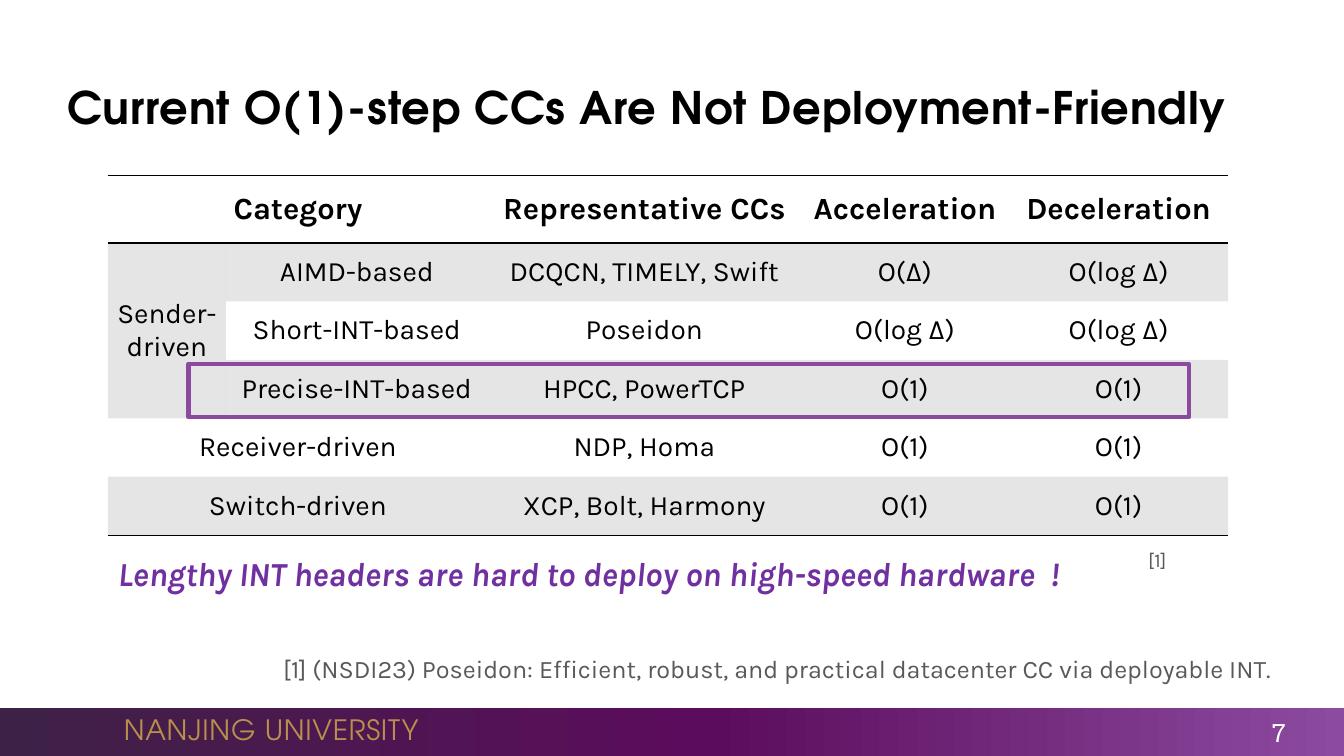
"""Build the slide on O(1)-step congestion control and its deployment limits."""
from copy import deepcopy
from dataclasses import dataclass

from lxml.etree import SubElement as sub
from pptx import Presentation
from pptx.dml.color import RGBColor as Rgb
from pptx.enum.shapes import MSO_SHAPE as Shape
from pptx.enum.text import MSO_ANCHOR as Anchor, PP_ALIGN as Align
from pptx.oxml.ns import qn
from pptx.util import Emu, Pt


@dataclass(frozen=True)
class Theme:
    geo: str = "TeX Gyre Adventor"
    body: str = "Karla"
    slab: str = "Roboto Slab"
    black: str = "000000"
    white: str = "FFFFFF"
    gray: str = "595959"
    shade: str = "808080"
    gold: str = "B88F4C"
    violet: str = "7030A0"
    frame: str = "8B4A9F"
    bar: tuple = ((0, "3E2146"), (0.53, "5C0C5C"), (1, "8C4BA0"))
    title: int = 32
    claim: int = 24
    head: int = 22
    cell: int = 20
    note: int = 18
    mark: int = 14
    plain: str = "{2D5ABB26-0587-4C30-8999-92F81FD0307C}"


@dataclass(frozen=True)
class Label:
    text: str
    box: tuple
    size: int
    color: str
    font: str = Theme.body
    bold: bool = False
    italic: bool = False
    align: Align = Align.LEFT
    anchor: Anchor = Anchor.TOP
    wrap: bool = True
    track: int = 0


@dataclass(frozen=True)
class Grid:
    left: int
    cols: tuple
    rows: tuple
    spans: tuple = ()


T = Theme()
TOP, HEAD, ROW, PAD = 174, 67, 58, 3

LABELS = (
    Label("NANJING UNIVERSITY", (113, 702, 317, 44), T.cell, T.gold, T.geo,
          anchor=Anchor.MIDDLE, wrap=False, track=50),
    Label("7", (1179, 709, 106, 35), T.note, T.white, T.slab,
          align=Align.RIGHT, anchor=Anchor.MIDDLE),
    Label("Current O(1)-step CCs Are Not Deployment-Friendly", (57, 67, 1200, 77),
          T.title, T.black, T.geo, bold=True, anchor=Anchor.MIDDLE, track=50),
    Label("[1] (NSDI23) Poseidon: Efficient, robust, and practical datacenter CC "
          "via deployable INT.", (271, 643, 1014, 40), T.note, T.gray),
    Label("[1]", (1129, 539, 50, 34), T.mark, T.gray),
    Label("Lengthy INT headers are hard to deploy on high-speed hardware  !",
          (107, 544, 1109, 50), T.claim, T.violet, bold=True, italic=True),
)

GRIDS = (
    Grid(107, (117, 260), (
        ("Category", ""),
        ("Sender-driven", "AIMD-based"),
        ("", "Short-INT-based"),
        ("", "Precise-INT-based"),
        ("Receiver-driven", ""),
        ("Switch-driven", ""),
    ), ((0, 0, 0, 1), (1, 0, 3, 0), (4, 0, 4, 1), (5, 0, 5, 1))),
    Grid(484, (310,), (
        ("Representative CCs",),
        ("DCQCN, TIMELY, Swift",),
        ("Poseidon",),
        ("HPCC, PowerTCP",),
        ("NDP, Homa",),
        ("XCP, Bolt, Harmony",),
    )),
    Grid(794, (207, 217), (
        ("Acceleration", "Deceleration"),
        ("O(Δ)", "O(log Δ)"),
        ("O(log Δ)", "O(log Δ)"),
        ("O(1)", "O(1)"),
        ("O(1)", "O(1)"),
        ("O(1)", "O(1)"),
    )),
)


def px(n: int) -> Emu:
    """Turn px, 100 to the inch, into EMU."""
    return Emu(n * 9144)


def style(para, size: int, color: str, font: str, bold: bool, italic: bool = False) -> None:
    """Set the font of a whole paragraph."""
    face = para.font
    face.size, face.name, face.bold, face.italic = Pt(size), font, bold, italic
    face.color.rgb = Rgb.from_string(color)


def write(slide, item: Label) -> None:
    """Add one text box."""
    frame = slide.shapes.add_textbox(*map(px, item.box)).text_frame
    frame.word_wrap, frame.vertical_anchor = item.wrap, item.anchor
    para = frame.paragraphs[0]
    para.text, para.alignment = item.text, item.align
    style(para, item.size, item.color, item.font, item.bold, item.italic)
    if item.track:
        para.runs[0].font._element.set("spc", str(item.track))


def rule(cell, side: str) -> None:
    """Draw a one point border on one side of a cell."""
    line = sub(cell._tc.get_or_add_tcPr(), qn(f"a:ln{side}"), w=str(Pt(1)))
    sub(sub(line, qn("a:solidFill")), qn("a:srgbClr"), val=T.black)


def tint(cell) -> None:
    """Fill a cell with see-through gray."""
    cell.fill.solid()
    cell.fill.fore_color.rgb = Rgb.from_string(T.shade)
    tone = cell._tc.tcPr.find(f"{qn('a:solidFill')}/{qn('a:srgbClr')}")
    sub(tone, qn("a:alpha"), val="20000")


def dress(cell, text: str, row: int, last: int) -> None:
    """Give a cell its text, borders and fill."""
    head = row == 0
    para = cell.text_frame.paragraphs[0]
    para.text, para.alignment = text, Align.CENTER
    style(para, T.head if head else T.cell, T.black, T.body, head)
    cell.vertical_anchor = Anchor.MIDDLE
    if head:
        rule(cell, "T")
    else:
        cell.margin_left = cell.margin_right = px(PAD)
        cell.margin_top = cell.margin_bottom = px(PAD)
    if row in (0, last):
        rule(cell, "B")
    if row % 2:
        tint(cell)
    else:
        cell.fill.background()


def lay(slide, grid: Grid) -> None:
    """Add one table."""
    count = len(grid.rows)
    high = HEAD + ROW * (count - 1)
    box = map(px, (grid.left, TOP, sum(grid.cols), high))
    table = slide.shapes.add_table(count, len(grid.cols), *box).table
    table.first_row = table.horz_banding = False
    table._tbl.tblPr.find(qn("a:tableStyleId")).text = T.plain
    for col, wide in zip(table.columns, grid.cols):
        col.width = px(wide)
    for i, texts in enumerate(grid.rows):
        table.rows[i].height = px(ROW if i else HEAD)
        for j, text in enumerate(texts):
            dress(table.cell(i, j), text, i, count - 1)
    for r, c, end, side in grid.spans:
        table.cell(r, c).merge(table.cell(end, side))


def block(slide, box: tuple):
    """Add a rectangle with no shadow."""
    rect = slide.shapes.add_shape(Shape.RECTANGLE, *map(px, box))
    rect.shadow.inherit = False
    return rect


def footer(slide) -> None:
    """Draw the shaded bar at the foot."""
    bar = block(slide, (0, 702, 1333, 48))
    bar.line.fill.background()
    bar.fill.gradient()
    bar.fill.gradient_angle = 0
    stops = bar._element.spPr.find(f"{qn('a:gradFill')}/{qn('a:gsLst')}")
    stops.append(deepcopy(stops[0]))
    for stop, (place, color) in zip(bar.fill.gradient_stops, T.bar):
        stop.position, stop.color.rgb = place, Rgb.from_string(color)


def main() -> None:
    """Draw the slide and save it."""
    deck = Presentation()
    deck.slide_width, deck.slide_height = px(1333), px(750)
    slide = deck.slides.add_slide(deck.slide_layouts[6])
    footer(slide)
    for grid in GRIDS:
        lay(slide, grid)
    mark = block(slide, (187, 361, 992, 53))
    mark.fill.background()
    mark.line.color.rgb, mark.line.width = Rgb.from_string(T.frame), Pt(3)
    for item in LABELS:
        write(slide, item)
    deck.save("out.pptx")


if __name__ == "__main__":
    main()
